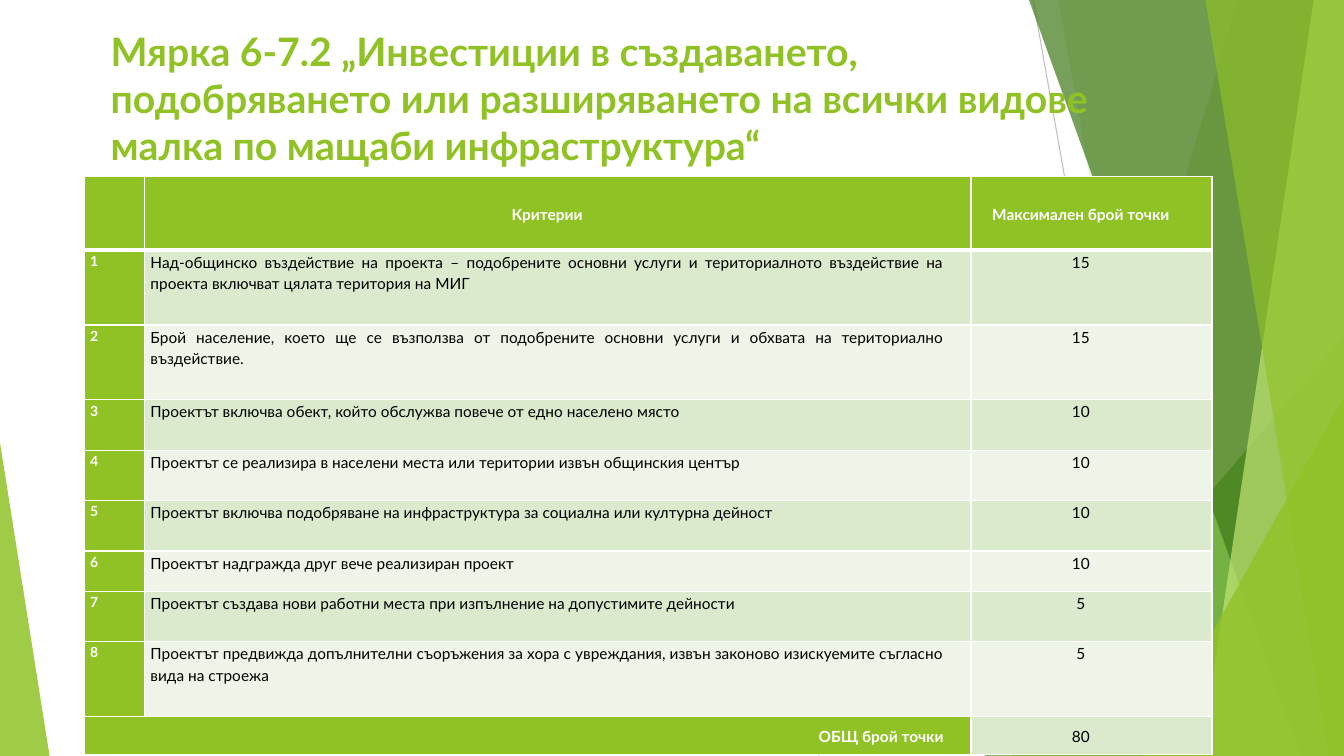
from lxml.etree import SubElement
from pptx import Presentation
from pptx.dml.color import RGBColor
from pptx.enum.shapes import MSO_CONNECTOR, MSO_SHAPE
from pptx.enum.text import MSO_ANCHOR, PP_ALIGN
from pptx.oxml import parse_xml
from pptx.oxml.ns import nsdecls, qn
from pptx.util import Inches, Pt

# Slide grid: 160 columns by 90 rows
W, H = Inches(13.333), Inches(7.5)
COLS, ROWS = 160, 90

FONT = "Lato"
GREEN = RGBColor(0x90, 0xC2, 0x26)
MID_GREEN = RGBColor(0x54, 0xA0, 0x21)
DARK_GREEN = RGBColor(0x3F, 0x78, 0x19)
LIME = RGBColor(0xC0, 0xE4, 0x74)
BAND_DARK = RGBColor(0xDB, 0xE9, 0xCD)
BAND_LIGHT = RGBColor(0xEE, 0xF4, 0xE8)
GRAY = RGBColor(0xBF, 0xBF, 0xBF)
LIGHT_GRAY = RGBColor(0xD9, 0xD9, 0xD9)
WHITE = RGBColor(0xFF, 0xFF, 0xFF)
BLACK = RGBColor(0, 0, 0)

TITLE = ("Мярка 6-7.2 „Инвестиции в създаването, подобряването или "
         "разширяването на всички видове малка по мащаби инфраструктура“")
HEADERS = ("", "Критерии", "Максимален брой точки")
# Criterion, points, row height
CRITERIA = [
    ("Над-общинско въздействие на проекта – подобрените основни услуги и "
     "териториалното въздействие на проекта включват цялата територия на МИГ", 15, 8.9),
    ("Брой население, което ще се възползва от подобрените основни услуги и "
     "обхвата на териториално въздействие.", 15, 8.9),
    ("Проектът включва обект, който обслужва повече от едно населено място", 10, 6),
    ("Проектът се реализира в населени места или територии извън общинския център", 10, 6),
    ("Проектът включва подобряване на инфраструктура за социална или културна дейност", 10, 6),
    ("Проектът надгражда друг вече реализиран проект", 10, 4.8),
    ("Проектът създава нови работни места при изпълнение на допустимите дейности", 5, 6),
    ("Проектът предвижда допълнителни съоръжения за хора с увреждания, извън "
     "законово изискуемите съгласно вида на строежа", 5, 8.9),
]
HEAD_ROW, TOTAL_ROW = 8.8, 4.5
NUMBER_COL, TEXT_COL = 7.2, 98.4

HEAD = dict(size=Pt(11), color=WHITE, bold=True, align=PP_ALIGN.CENTER)
NUMBER = dict(size=Pt(10), color=WHITE, bold=True, align=PP_ALIGN.LEFT)
BODY = dict(size=Pt(11), color=BLACK, bold=False, align=PP_ALIGN.JUSTIFY)
SCORE = dict(BODY, align=PP_ALIGN.CENTER)
TOTAL = dict(HEAD, align=PP_ALIGN.RIGHT)
HEADING = dict(size=Pt(28), color=GREEN, bold=True, align=PP_ALIGN.LEFT)


def cx(n):
    return round(W * n / COLS)


def cy(n):
    return round(H * n / ROWS)


def write(tf, text, fmt):
    p = tf.paragraphs[0]
    p.alignment = fmt["align"]
    r = p.add_run()
    r.text = text
    for name in ("size", "bold"):
        setattr(r.font, name, fmt[name])
    r.font.name = FONT
    r.font.color.rgb = fmt["color"]
    return p


def paint(sp, color, opacity):
    sp.shadow.inherit = False
    sp.line.fill.background()
    sp.fill.solid()
    sp.fill.fore_color.rgb = color
    clr = sp.fill._xPr.find(qn("a:solidFill"))[0]
    SubElement(clr, qn("a:alpha")).set("val", str(opacity * 1000))


def add_backdrop(s, box):
    x, y, w, h = box
    right, bottom = x + w, y + h

    # Thin lines
    for x1, y1, x2, y2, color in ((123, 0, 139, h, GRAY),
                                  (w, 48.4, 97.4, h, LIGHT_GRAY)):
        ln = s.shapes.add_connector(MSO_CONNECTOR.STRAIGHT, cx(x + x1), cy(y + y1),
                                    cx(x + x2), cy(y + y2))
        ln.line.color.rgb = color
        ln.line.width = Pt(0.75)
        SubElement(ln._element.spPr, qn("a:effectLst"))

    def facet(top_x, bottom_x, color, opacity):
        fb = s.shapes.build_freeform(cx(x + top_x), cy(y))
        fb.add_line_segments([(cx(right), cy(y)), (cx(right), cy(bottom)),
                              (cx(x + bottom_x), cy(bottom))], close=True)
        paint(fb.convert_to_shape(), color, opacity)

    def corner(left, top, width, apex, color, opacity):
        sp = s.shapes.add_shape(MSO_SHAPE.ISOSCELES_TRIANGLE, cx(x + left), cy(y + top),
                                cx(width), cy(h - top))
        sp.adjustments[0] = apex
        paint(sp, color, opacity)

    # Overlapping translucent facets, back to front
    facet(147.4, 120.5, GREEN, 30)
    facet(126, 142, GREEN, 20)
    corner(117.2, 40, w - 117.2, 1, MID_GREEN, 72)
    facet(122.5, 154.9, DARK_GREEN, 70)
    facet(156.4, 143, LIME, 70)
    facet(143.5, 158.2, GREEN, 65)
    corner(136.1, 47.2, w - 136.1, 1, GREEN, 80)
    corner(0, 52.7, 5.9, 0, GREEN, 85)


def add_title(s, box):
    x, y, w, h = box
    tf = s.shapes.add_textbox(cx(x), cy(y), cx(w), cy(h)).text_frame
    tf.word_wrap = True
    tf.vertical_anchor = MSO_ANCHOR.MIDDLE
    write(tf, TITLE, HEADING)


def set_cell(cell, text, fmt, fill, anchor=MSO_ANCHOR.TOP, top=1, bottom=1):
    side = Inches(0.06)
    for name, value in dict(margin_left=side, margin_right=side, margin_top=0,
                            margin_bottom=0, vertical_anchor=anchor).items():
        setattr(cell, name, value)
    if text:
        p = write(cell.text_frame, text, fmt)
        p.line_spacing = 1.15
        if fmt is not NUMBER:
            p._p.get_or_add_pPr().set("marR", str(Inches(0.21)))
    # White borders come before the fill
    tcPr = cell._tc.get_or_add_tcPr()
    for tag, width in (("lnL", 1), ("lnR", 1), ("lnT", top), ("lnB", bottom)):
        tcPr.append(parse_xml(
            f'<a:{tag} {nsdecls("a")} w="{Pt(width)}"><a:solidFill>'
            f'<a:srgbClr val="{WHITE}"/></a:solidFill></a:{tag}>'))
    cell.fill.solid()
    cell.fill.fore_color.rgb = fill


def add_criteria_table(s, box):
    x, y, w, h = box
    heights = [HEAD_ROW, *(c[2] for c in CRITERIA), TOTAL_ROW]
    widths = [NUMBER_COL, TEXT_COL, w - NUMBER_COL - TEXT_COL]
    tbl = s.shapes.add_table(len(heights), len(widths),
                             cx(x), cy(y), cx(w), cy(h)).table
    for col, width in zip(tbl.columns, widths):
        col.width = cx(width)
    for row, height in zip(tbl.rows, heights):
        row.height = cy(height)

    # Header
    for c, text in enumerate(HEADERS):
        set_cell(tbl.cell(0, c), text, HEAD, GREEN, MSO_ANCHOR.MIDDLE, bottom=3)

    # Numbered criteria
    for i, (text, points, _) in enumerate(CRITERIA, 1):
        band = BAND_DARK if i % 2 else BAND_LIGHT
        top = 3 if i == 1 else 1
        set_cell(tbl.cell(i, 0), str(i), NUMBER, GREEN, top=top)
        set_cell(tbl.cell(i, 1), text, BODY, band, top=top)
        set_cell(tbl.cell(i, 2), str(points), SCORE, band, top=top)

    # Total
    last = len(heights) - 1
    tbl.cell(last, 0).merge(tbl.cell(last, 1))
    set_cell(tbl.cell(last, 0), "ОБЩ брой точки", TOTAL, GREEN, MSO_ANCHOR.MIDDLE)
    set_cell(tbl.cell(last, 2), str(sum(c[1] for c in CRITERIA)), SCORE, BAND_DARK,
             MSO_ANCHOR.MIDDLE)


def main():
    prs = Presentation()
    prs.slide_width, prs.slide_height = W, H
    s = prs.slides.add_slide(prs.slide_layouts[6])
    add_backdrop(s, (0, 0, COLS, ROWS))
    add_title(s, (12, 2.3, 119, 18.7))
    add_criteria_table(s, (10, 21, 134.3, 69))
    prs.save("out.pptx")


if __name__ == "__main__":
    main()
